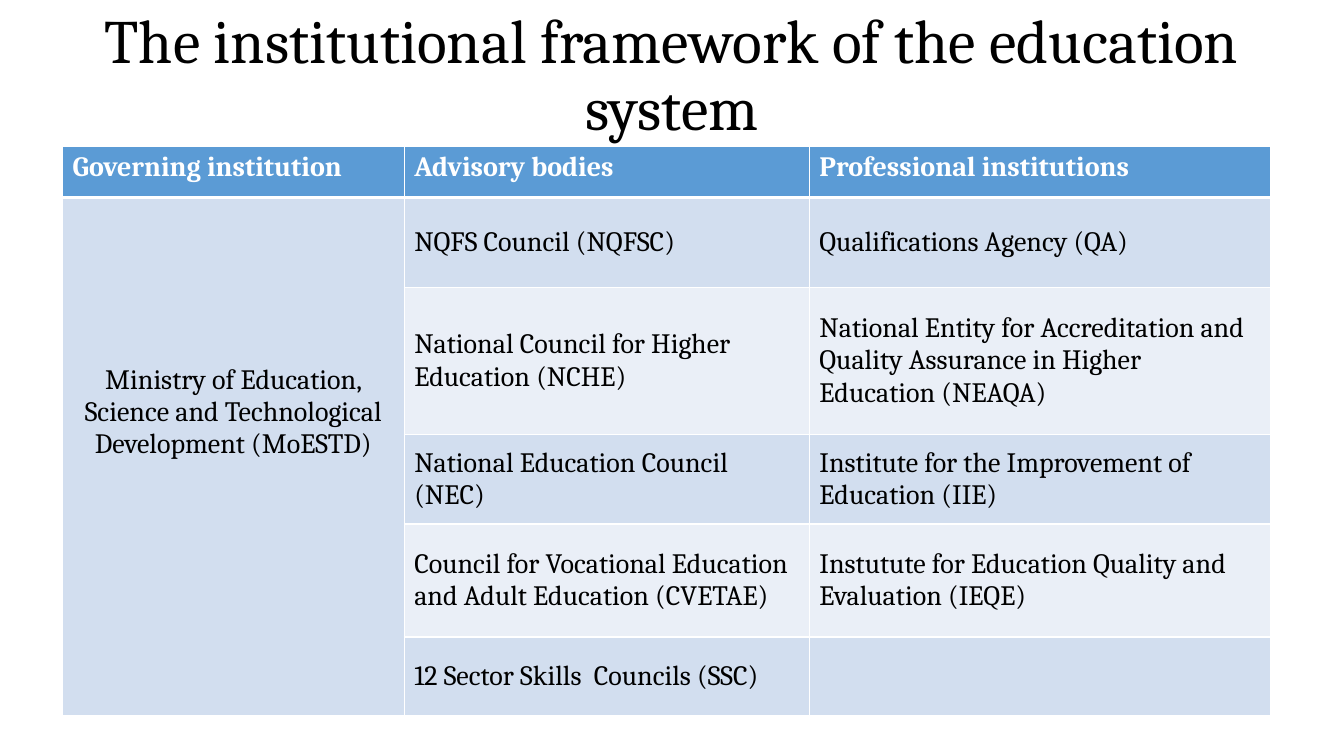
from lxml import etree
from pptx import Presentation
from pptx.dml.color import RGBColor
from pptx.enum.text import MSO_ANCHOR, PP_ALIGN
from pptx.oxml.ns import qn
from pptx.util import Pt

# Content
TITLE = "The institutional framework of the education system"
HEADINGS = ("Governing institution", "Advisory bodies", "Professional institutions")
MINISTRY = "Ministry of Education, Science and Technological Development (MoESTD)"
BODIES = [
    ("NQFS Council (NQFSC)", "Qualifications Agency (QA)"),
    ("National Council for Higher Education (NCHE)",
     "National Entity for Accreditation and Quality Assurance in Higher Education (NEAQA)"),
    ("National Education Council (NEC)", "Institute for the Improvement of Education (IIE)"),
    ("Council for Vocational Education and Adult Education (CVETAE)",
     "Instutute for Education Quality and Evaluation (IEQE)"),
    ("12 Sector Skills  Councils (SSC)", ""),
]

# Style
FONT = "Cambria"
BLACK = RGBColor(0x00, 0x00, 0x00)
WHITE = RGBColor(0xFF, 0xFF, 0xFF)
HEADER_BLUE = RGBColor(0x5B, 0x9B, 0xD5)
BANDS = (RGBColor(0xD2, 0xDE, 0xEF), RGBColor(0xEA, 0xEF, 0xF7))
TOP, MIDDLE = MSO_ANCHOR.TOP, MSO_ANCHOR.MIDDLE
LEFT, CENTER = PP_ALIGN.LEFT, PP_ALIGN.CENTER

# Layout in points
TABLE_LEFT, TABLE_TOP = 44.64, 104.4
COLUMN_WIDTHS = (244.08, 289.44, 329.76)
ROW_HEIGHTS = (36.72, 64.08, 105.12, 64.08, 80.64, 56.16)
MINISTRY_INSET = 119
THIN, THICK = 1, 3


def write(para, text, size, color, bold=False, align=LEFT):
    para.alignment = align
    para.font.size = Pt(size)
    if text:
        span = para.add_run()
        span.text = text
        span.font.name = FONT
        span.font.size = Pt(size)
        span.font.bold = bold
        span.font.color.rgb = color


def add_borders(cell, top, bottom):
    properties = cell._tc.get_or_add_tcPr()
    sides = (("a:lnL", THIN), ("a:lnR", THIN), ("a:lnT", top), ("a:lnB", bottom))
    for position, (tag, width) in enumerate(sides):
        line = etree.Element(qn(tag), w=str(Pt(width)))
        fill = etree.SubElement(line, qn("a:solidFill"))
        etree.SubElement(fill, qn("a:srgbClr"), val=str(WHITE))
        properties.insert(position, line)


deck = Presentation()
deck.slide_width, deck.slide_height = Pt(960), Pt(540)
page = deck.slides.add_slide(deck.slide_layouts[6])

# Title
box = page.shapes.add_textbox(Pt(66), Pt(28.8), Pt(828), Pt(52.56))
frame = box.text_frame
frame.word_wrap = True
frame.vertical_anchor = MIDDLE
frame.paragraphs[0].line_spacing = 0.9
write(frame.paragraphs[0], TITLE, 44, BLACK, align=CENTER)

# Table grid
table = page.shapes.add_table(
    len(ROW_HEIGHTS), len(COLUMN_WIDTHS), Pt(TABLE_LEFT), Pt(TABLE_TOP),
    Pt(sum(COLUMN_WIDTHS)), Pt(sum(ROW_HEIGHTS))).table
for column, width in zip(table.columns, COLUMN_WIDTHS):
    column.width = Pt(width)
for row, height in zip(table.rows, ROW_HEIGHTS):
    row.height = Pt(height)
table.cell(1, 0).merge(table.cell(len(BODIES), 0))

# Table cells
rows = [HEADINGS] + [(MINISTRY if i == 0 else "", *pair) for i, pair in enumerate(BODIES)]
for r, texts in enumerate(rows):
    header = r == 0
    for c, text in enumerate(texts):
        cell = table.cell(r, c)
        cell.fill.solid()
        cell.fill.fore_color.rgb = HEADER_BLUE if header else BANDS[0 if c == 0 else (r - 1) % 2]
        cell.vertical_anchor = TOP if header or c == 0 else MIDDLE
        add_borders(cell, THICK if r == 1 else THIN, THICK if header else THIN)
        write(cell.text_frame.paragraphs[0], text, 20, WHITE if header else BLACK,
              bold=header, align=CENTER if c == 0 and not header else LEFT)
table.cell(1, 0).margin_top = Pt(MINISTRY_INSET)

deck.save("out.pptx")
